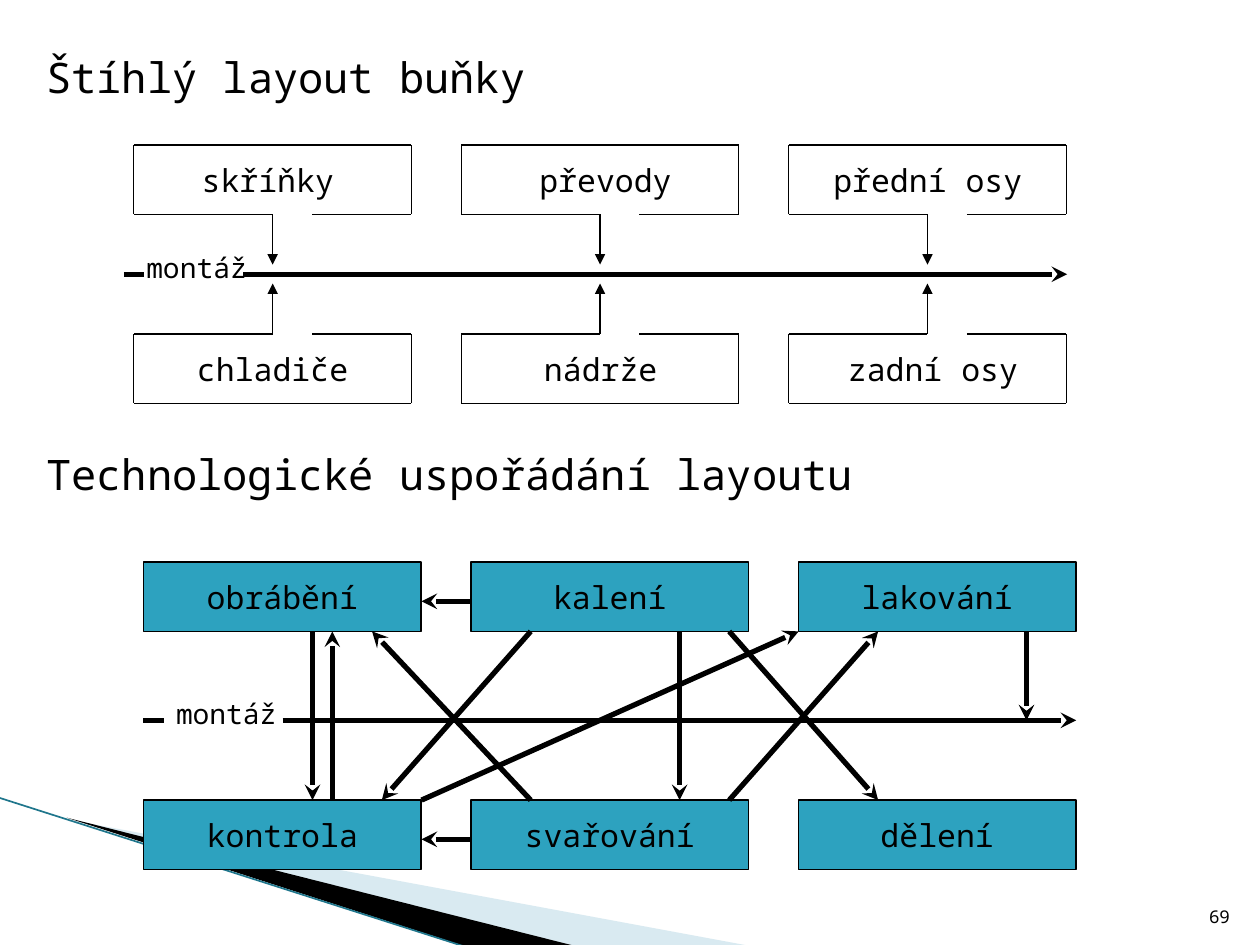
import pptx
import pptx.dml.color
import pptx.enum.shapes
import pptx.enum.text
import pptx.oxml
import pptx.oxml.ns
import pptx.util

Pt = pptx.util.Pt
Color = pptx.dml.color.RGBColor
Align = pptx.enum.text.PP_ALIGN
Anchor = pptx.enum.text.MSO_ANCHOR
NS = pptx.oxml.ns.nsdecls("a")

BLACK = Color(0x00, 0x00, 0x00)
TEAL = Color(0x2D, 0xA2, 0xBF)
EDGE = Color(0x1F, 0x76, 0x8C)
PALE = Color(0xA0, 0xCB, 0xDC)
FONT = "Noto Sans Mono"

# Shared grid, in points
STEP = 187.1
WIDE, HIGH = 158.6, 39.6
CELL_X, CELL_TOP, CELL_LOW = 76.5, 82.8, 190.8
SHOP_X, SHOP_TOP, SHOP_LOW = 82, 321.2, 457.2
SHOP_END = SHOP_TOP + HIGH

# Label, left, width
CELLS_TOP = [("skříňky", 82, 142), ("převody", 269.5, 153),
             ("přední osy", 462.2, 136)]
CELLS_LOW = [("chladiče", 82, 147.5), ("nádrže", 269.5, 147.5),
             ("zadní osy", 473.6, 119)]
SHOPS_TOP = ["obrábění", "kalení", "lakování"]
SHOPS_LOW = ["kontrola", "svařování", "dělení"]

FLOWS = [
    ((586.6, SHOP_END), (586.6, 411.6)),
    ((388.4, SHOP_END), (388.4, SHOP_LOW)),
    ((178.6, SHOP_END), (178.6, SHOP_LOW)),
    ((189.9, SHOP_LOW), (189.9, SHOP_END)),
    ((269.3, 343.6), (240.9, 343.6)),
    ((269.3, 479.6), (240.9, 479.6)),
    ((416.7, SHOP_LOW), (501.8, SHOP_END)),
    ((416.7, SHOP_END), (501.8, SHOP_LOW)),
    ((303.3, SHOP_END), (218.2, SHOP_LOW)),
    ((303.3, SHOP_LOW), (212.6, SHOP_END)),
    ((240.9, SHOP_LOW), (456.4, SHOP_END)),
]


def write(frame, text, size=18, align=Align.LEFT, anchor=Anchor.TOP, wrap=True):
    frame.word_wrap = wrap
    frame.vertical_anchor = anchor
    para = frame.paragraphs[0]
    para.alignment = align
    run = para.add_run()
    run.text = text
    run.font.size = Pt(size)
    run.font.name = FONT
    run.font.color.rgb = BLACK


def label(slide, text, left, top, width, height, **style):
    box = slide.shapes.add_textbox(Pt(left), Pt(top), Pt(width), Pt(height))
    write(box.text_frame, text, **style)


def line(slide, start, end, width=0.75, head=None, color=BLACK):
    kind = pptx.enum.shapes.MSO_CONNECTOR.STRAIGHT
    link = slide.shapes.add_connector(kind, *map(Pt, start + end))
    link.line.color.rgb = color
    link.line.width = Pt(width)
    if head:
        tail = pptx.oxml.parse_xml(f'<a:tailEnd {NS} type="{head}"/>')
        link.line._get_or_add_ln().append(tail)
    props = link._element.spPr
    props.append(pptx.oxml.parse_xml(f"<a:effectLst {NS}/>"))


def wedge(slide, points, color, alpha=None):
    spots = [(Pt(x), Pt(y)) for x, y in points]
    build = slide.shapes.build_freeform(*spots[0])
    build.add_line_segments(spots[1:], close=True)
    shape = build.convert_to_shape()
    shape.shadow.inherit = False
    shape.line.fill.background()
    shape.fill.solid()
    shape.fill.fore_color.rgb = color
    if alpha:
        tint = shape._element.spPr.find(".//" + pptx.oxml.ns.qn("a:srgbClr"))
        tint.append(pptx.oxml.parse_xml(f'<a:alpha {NS} val="{alpha * 1000}"/>'))


def cell(slide, left, inner, outer, tip):
    """Outline with a gap in its inner edge, and an arrow to the main line."""
    right, mid = left + WIDE, left + WIDE / 2
    spots = [(mid + 22.5, inner), (right, inner), (right, outer),
             (left, outer), (left, inner), (mid, inner)]
    for start, end in zip(spots, spots[1:]):
        line(slide, start, end)
    line(slide, (mid, inner), (mid, tip), head="triangle")


def shop(slide, text, left, top):
    kind = pptx.enum.shapes.MSO_SHAPE.RECTANGLE
    box = slide.shapes.add_shape(kind, Pt(left), Pt(top), Pt(WIDE), Pt(HIGH))
    box.shadow.inherit = False
    box.fill.solid()
    box.fill.fore_color.rgb = TEAL
    box.line.color.rgb = BLACK
    box.line.width = Pt(0.75)
    write(box.text_frame, text, align=Align.CENTER, anchor=Anchor.MIDDLE,
          wrap=False)


def axis(slide, left, start, end, y, text_x, text_y):
    line(slide, (left, y), (left + 11.5, y), width=3)
    line(slide, (start, y), (end, y), width=3, head="stealth")
    label(slide, "montáž", text_x, text_y, 85, 26.6, size=16)


def main():
    deck = pptx.Presentation()
    deck.slide_width, deck.slide_height = Pt(720), Pt(540)
    slide = deck.slides.add_slide(deck.slide_layouts[6])

    # Corner decoration
    wedge(slide, [(39.6, 468.5), (428.4, 540.5), (328.3, 540.5)], PALE, 40)
    wedge(slide, [(38.2, 467.3), (329, 540.7), (267.8, 541.4)], BLACK)
    line(slide, (-0.7, 455.8), (267.1, 541.4), width=0.95, color=EDGE)

    # Lean cell layout
    label(slide, "Štíhlý layout buňky", 19.4, 25.9, 289.4, 36, size=24)
    rows = [(CELLS_TOP, CELL_TOP + HIGH, CELL_TOP, 151.2, 88.6),
            (CELLS_LOW, CELL_LOW, CELL_LOW + HIGH, 162, 196.6)]
    for names, inner, outer, tip, top in rows:
        for col, (text, left, width) in enumerate(names):
            cell(slide, CELL_X + col * STEP, inner, outer, tip)
            label(slide, text, left, top, width, 28.8, align=Align.CENTER)
    axis(slide, 70.8, 139, 609.8, 156.7, 76.5, 139.7)

    # Technological layout
    label(slide, "Technologické uspořádání layoutu", 19.4, 252.7, 476, 36,
          size=24)
    axis(slide, 82, 161.5, 615, 411.6, 93.5, 394.6)
    for names, top in [(SHOPS_TOP, SHOP_TOP), (SHOPS_LOW, SHOP_LOW)]:
        for col, text in enumerate(names):
            shop(slide, text, SHOP_X + col * STEP, top)
    for start, end in FLOWS:
        line(slide, start, end, width=3, head="stealth")

    # Page number
    label(slide, "69", 681.1, 504.7, 28.8, 28.8, size=10, align=Align.RIGHT,
          anchor=Anchor.BOTTOM)
    deck.save("out.pptx")


if __name__ == "__main__":
    main()
